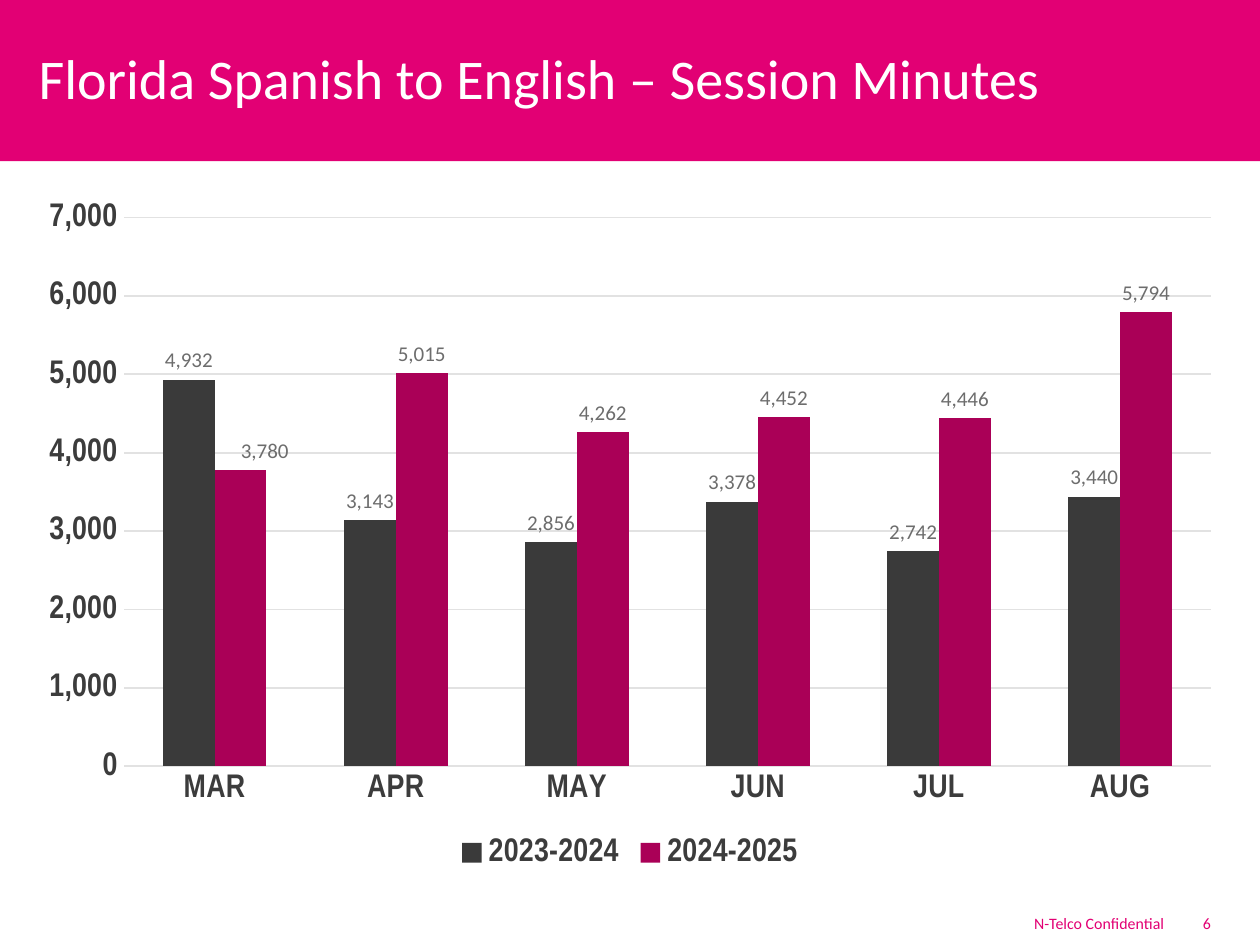
from pptx import Presentation
from pptx.chart.data import CategoryChartData
from pptx.dml.color import RGBColor
from pptx.enum.chart import XL_CHART_TYPE, XL_LABEL_POSITION, XL_LEGEND_POSITION, XL_TICK_MARK
from pptx.enum.shapes import MSO_SHAPE
from pptx.enum.text import MSO_ANCHOR, PP_ALIGN
from pptx.oxml import parse_xml
from pptx.oxml.ns import nsdecls
from pptx.util import Inches, Pt

COLUMNS = XL_CHART_TYPE.COLUMN_CLUSTERED
OUTSIDE = XL_LABEL_POSITION.OUTSIDE_END
BOTTOM = XL_LEGEND_POSITION.BOTTOM
NO_TICK = XL_TICK_MARK.NONE
RECT = MSO_SHAPE.RECTANGLE
MIDDLE = MSO_ANCHOR.MIDDLE
LEFT, RIGHT = PP_ALIGN.LEFT, PP_ALIGN.RIGHT

WIDTH, HEIGHT = Pt(540), Pt(405)
MAGENTA = "E20074"
NUMBER = "#,##0"
TITLE_FONT = {"name": "Calibri", "size": Pt(24), "color": "FFFFFF"}
FOOTER_FONT = {"name": "Calibri", "size": Pt(6.8), "color": MAGENTA}
CHART_FONT = {"name": "Calibri", "size": Pt(10), "color": "3C3C3C"}
AXIS_FONT = {"name": "Arial Narrow", "size": Pt(14), "bold": True, "color": "3C3C3C"}
LABEL_FONT = {"name": "Calibri", "size": Pt(9), "bold": False, "color": "6D6D6D"}

MONTHS = ["MAR", "APR", "MAY", "JUN", "JUL", "AUG"]
MINUTES = {
    "2023-2024": ("3A3A3A", [4932, 3143, 2856, 3378, 2742, 3440]),
    "2024-2025": ("AA0057", [3780, 5015, 4262, 4452, 4446, 5794]),
}


def rgb(value):
    """Turn a hex string into a colour."""
    return RGBColor.from_string(value)


def set_font(font, style):
    """Apply a dict of format values to a font."""
    for name, value in style.items():
        if name == "color":
            font.color.rgb = rgb(value)
        else:
            setattr(font, name, value)


def add_band(s, height, color):
    """Add a full-width band at the top of the slide."""
    sp = s.shapes.add_shape(RECT, 0, 0, WIDTH, Inches(height))
    sp.shadow.inherit = False
    sp.fill.solid()
    sp.fill.fore_color.rgb = rgb(color)
    sp.line.fill.background()


def add_text(s, box, text, style, inset, align=LEFT):
    """Add one line of vertically centred text."""
    tf = s.shapes.add_textbox(*map(Inches, box)).text_frame
    tf.word_wrap = True
    tf.vertical_anchor = MIDDLE
    tf.margin_left = tf.margin_right = Inches(inset)
    tf.margin_top = tf.margin_bottom = Inches(inset / 2)
    p = tf.paragraphs[0]
    p.alignment = align
    r = p.add_run()
    r.text = text
    set_font(r.font, style)


def style_axes(chart):
    """Format both axes and the gridlines."""
    for axis in (chart.category_axis, chart.value_axis):
        axis.major_tick_mark = axis.minor_tick_mark = NO_TICK
        axis.format.line.fill.background()
        set_font(axis.tick_labels.font, AXIS_FONT)
    axis = chart.value_axis
    axis.minimum_scale, axis.maximum_scale, axis.major_unit = 0, 7000, 1000
    axis.tick_labels.number_format = NUMBER
    axis.tick_labels.number_format_is_linked = False
    grid = axis.major_gridlines.format.line
    grid.color.rgb = rgb("E2E2E2")
    grid.width = Pt(0.75)


def style_series(series, color):
    """Colour a series and label its columns."""
    series.format.fill.solid()
    series.format.fill.fore_color.rgb = rgb(color)
    series.invert_if_negative = False
    labels = series.data_labels
    labels.show_value = True
    labels.number_format = NUMBER
    labels.number_format_is_linked = False
    labels.position = OUTSIDE
    set_font(labels.font, LABEL_FONT)


def shift_label(series, index, share):
    """Move one data label sideways by a share of the chart's width."""
    label = series.points[index].data_label
    set_font(label.font, LABEL_FONT)
    label.position = OUTSIDE
    idx = series._element.xpath(f"c:dLbls/c:dLbl/c:idx[@val='{index}']")[0]
    idx.addnext(parse_xml(
        f'<c:layout {nsdecls("c")}><c:manualLayout>'
        f'<c:x val="{share}"/><c:y val="0"/>'
        '</c:manualLayout></c:layout>'))


def add_minutes_chart(s, box):
    """Add the clustered column chart of session minutes."""
    data = CategoryChartData(number_format=NUMBER)
    data.categories = MONTHS
    for name, (color, values) in MINUTES.items():
        data.add_series(name, values)
    chart = s.shapes.add_chart(COLUMNS, *map(Inches, box), data).chart
    chart.has_title = False
    set_font(chart.font, CHART_FONT)
    chart.has_legend = True
    chart.legend.position = BOTTOM
    chart.legend.include_in_layout = False
    set_font(chart.legend.font, AXIS_FONT)
    style_axes(chart)
    plot = chart.plots[0]
    plot.vary_by_categories = False
    plot.gap_width, plot.overlap = 150, 0
    for series in plot.series:
        style_series(series, MINUTES[series.name][0])
    shift_label(plot.series[1], 0, 0.02)


def main():
    """Build the session minutes slide."""
    prs = Presentation()
    prs.slide_width, prs.slide_height = WIDTH, HEIGHT
    s = prs.slides.add_slide(prs.slide_layouts[6])
    add_band(s, 0.96, MAGENTA)
    add_text(s, (0.15, 0.16, 7.24, 0.6), "Florida Spanish to English – Session Minutes", TITLE_FONT, 0.08)
    add_minutes_chart(s, (0.15, 1.12, 7.2, 4.09))
    add_text(s, (4.61, 5.41, 2.38, 0.17), "N-Telco Confidential", FOOTER_FONT, 0.06, RIGHT)
    add_text(s, (7.1, 5.41, 0.38, 0.17), "6", FOOTER_FONT, 0.06)
    prs.save("out.pptx")


if __name__ == "__main__":
    main()
